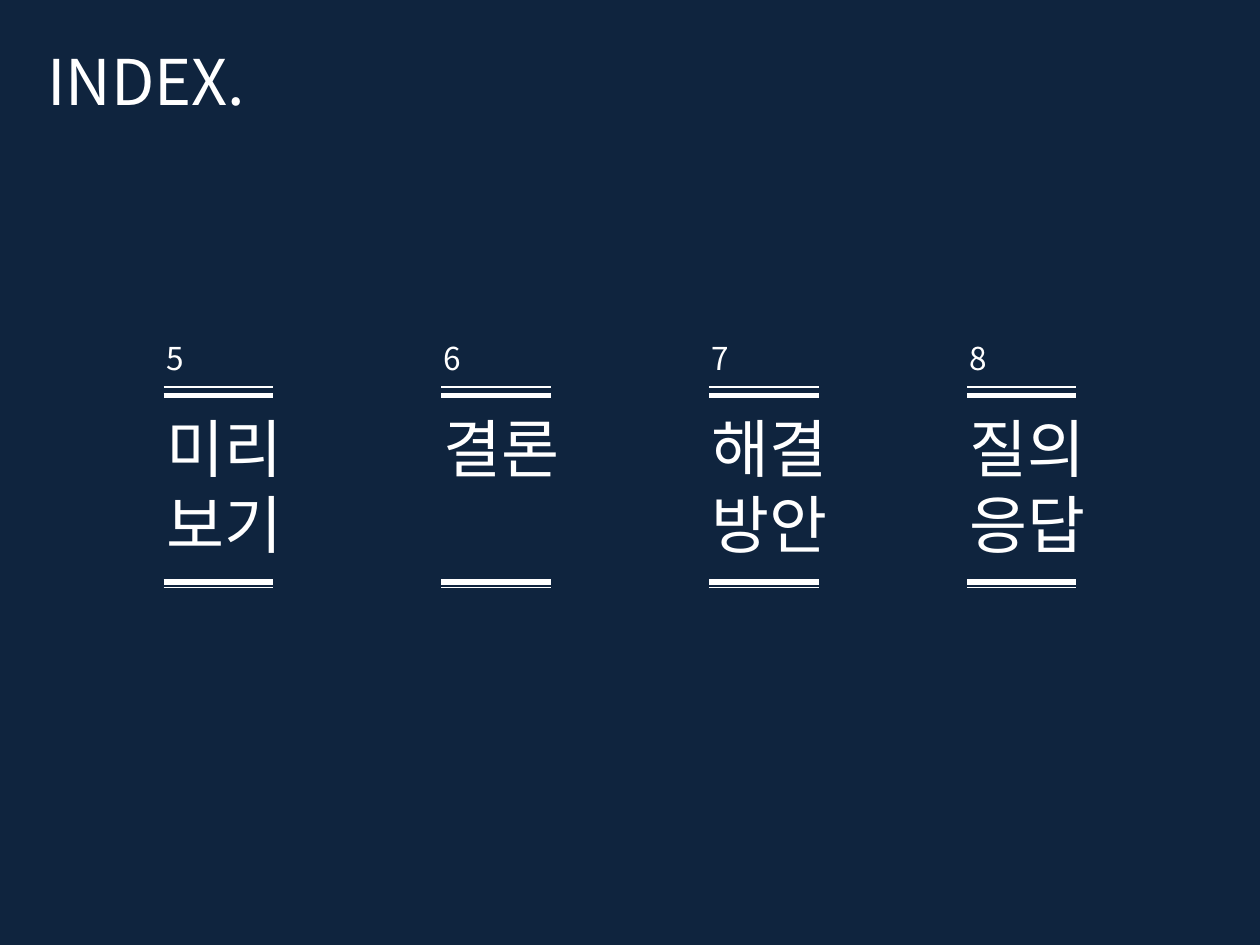
from lxml.etree import SubElement
from pptx import Presentation
from pptx.dml.color import RGBColor
from pptx.enum.lang import MSO_LANGUAGE_ID
from pptx.enum.shapes import MSO_CONNECTOR, MSO_SHAPE
from pptx.enum.text import MSO_AUTO_SIZE
from pptx.oxml.ns import qn
from pptx.util import Cm, Pt

COLORS = {"navy": "0F243E", "white": "FFFFFF"}
FONT = "Noto Sans CJK KR"
RULE_WIDTH = 2.2
# Distance of each rule from the top of the slide (cm) and its weight (pt)
RULES = [(7.8, 0.75), (7.98, 3), (11.73, 3), (11.84, 0.75)]
# Left edge of the rules (cm), number, title, title width and height (cm)
ENTRIES = [
    (3.3, "5", "미리보기", 3.2, 3.33),
    (8.9, "6", "결론", 3.76, 1.8),
    (14.3, "7", "해결방안", 3.2, 3.33),
    (19.5, "8", "질의응답", 3.2, 3.33),
]


def color(name):
    return RGBColor.from_string(COLORS[name])


def add_background(slide, deck):
    panel = slide.shapes.add_shape(
        MSO_SHAPE.RECTANGLE, 0, 0, deck.slide_width, deck.slide_height)
    panel.shadow.inherit = False
    panel.fill.solid()
    panel.fill.fore_color.rgb = color("navy")
    panel.line.fill.background()


def add_text(slide, text, left, top, width, height, size):
    box = slide.shapes.add_textbox(Cm(left), Cm(top), Cm(width), Cm(height))
    frame = box.text_frame
    frame.word_wrap = True
    frame.auto_size = MSO_AUTO_SIZE.SHAPE_TO_FIT_TEXT
    para = frame.paragraphs[0]
    para.line_spacing = Pt(size * 1.2)
    span = para.add_run()
    span.text = text
    span.font.size = Pt(size)
    span.font.name = FONT
    span.font.language_id = MSO_LANGUAGE_ID.KOREAN
    span.font.color.rgb = color("white")
    # Hangul takes its typeface from the East Asian font
    SubElement(span.font._element, qn("a:ea"), typeface=FONT)


def add_rule(slide, left, top, weight):
    rule = slide.shapes.add_connector(
        MSO_CONNECTOR.STRAIGHT,
        Cm(left), Cm(top), Cm(left + RULE_WIDTH), Cm(top))
    rule.line.color.rgb = color("white")
    rule.line.width = Pt(weight)
    SubElement(rule._element.spPr, qn("a:effectLst"))


def add_entry(slide, left, number, title, width, height):
    """Add a numbered index title framed by double rules."""
    text_left = left - 0.2
    add_text(slide, number, text_left, 6.7, 3.2, 1.02, 18)
    add_text(slide, title, text_left, 8.13, width, height, 36)
    for top, weight in RULES:
        add_rule(slide, left, top, weight)


def main():
    deck = Presentation()
    deck.slide_width, deck.slide_height = Cm(25.4), Cm(19.05)
    slide = deck.slides.add_slide(deck.slide_layouts[6])
    add_background(slide, deck)
    add_text(slide, "INDEX.", 0.7, 0.74, 8.6, 1.8, 36)
    for entry in ENTRIES:
        add_entry(slide, *entry)
    deck.save("out.pptx")


if __name__ == "__main__":
    main()
